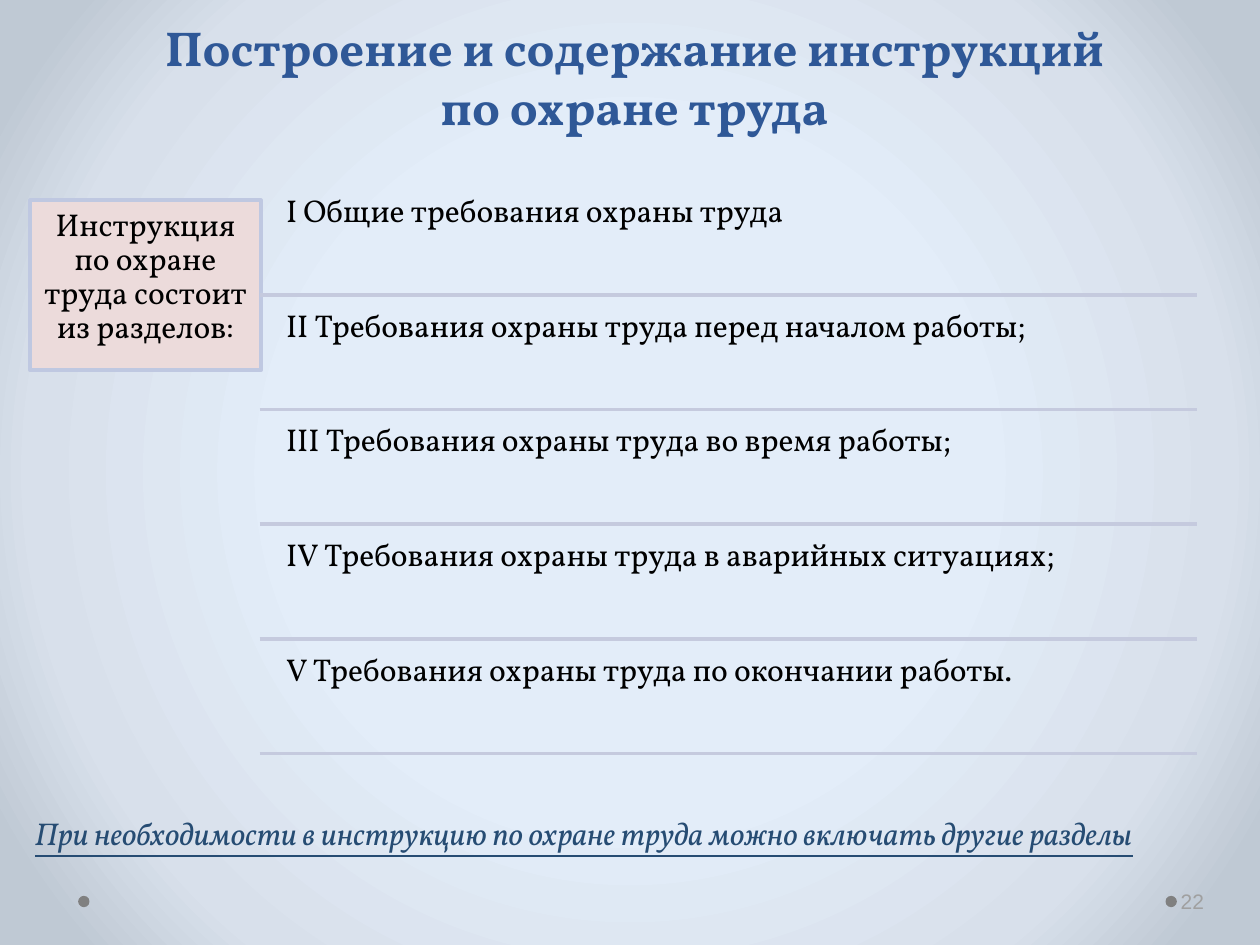
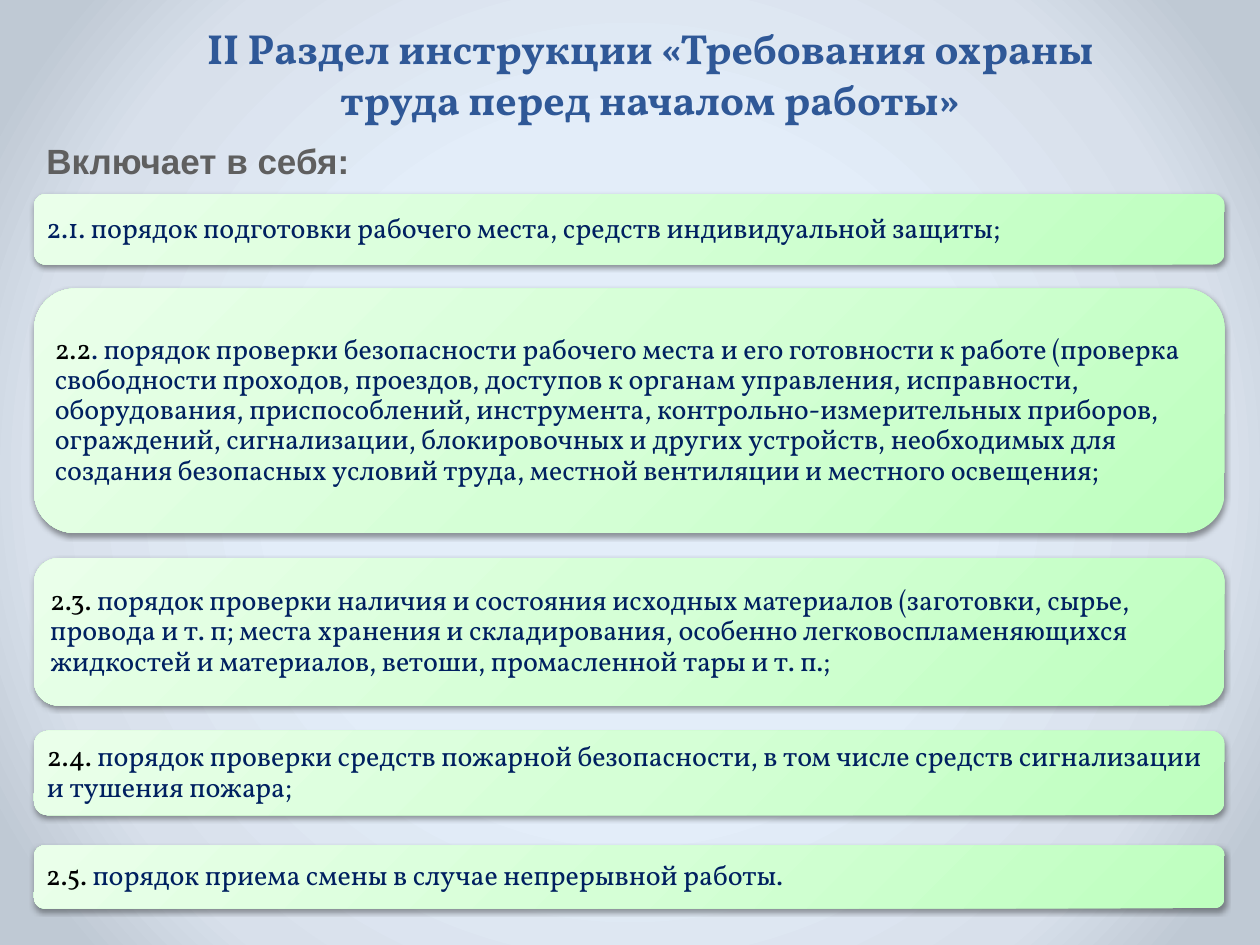
import copy

import pptx
import pptx.dml.color
import pptx.enum.shapes
import pptx.enum.text
import pptx.oxml
import pptx.oxml.ns
import pptx.util
from lxml import etree

RGBColor = pptx.dml.color.RGBColor
MSO_SHAPE = pptx.enum.shapes.MSO_SHAPE
ALIGN = pptx.enum.text.PP_ALIGN
ANCHOR = pptx.enum.text.MSO_ANCHOR
qn = pptx.oxml.ns.qn

TITLE_BLUE = RGBColor(0x2F, 0x58, 0x97)
NOTE_BLUE = RGBColor(0x26, 0x4C, 0x73)
NAVY = RGBColor(0x00, 0x20, 0x60)
BLACK = RGBColor(0x00, 0x00, 0x00)
DOT_GREY = RGBColor(0x80, 0x80, 0x80)
NUMBER_GREY = RGBColor(0xA0, 0xA0, 0xA0)
LEAD_GREY = RGBColor(0x5F, 0x5F, 0x5F)
PINK = RGBColor(0xEC, 0xDB, 0xDB)
BOX_EDGE = RGBColor(0xBF, 0xC8, 0xE1)
RULE_BLUE = RGBColor(0xC5, 0xCA, 0xDE)
SKY = [(43, RGBColor(0xE3, 0xED, 0xF9)), (76, RGBColor(0xD8, 0xE0, 0xEB)), (92, RGBColor(0xBF, 0xC9, 0xD4))]
GREEN = [(0, RGBColor(0xBE, 0xFF, 0xBF)), (50, RGBColor(0xD5, 0xFF, 0xD6)), (100, RGBColor(0xEA, 0xFF, 0xEA))]

DRAWING = 'xmlns:a="http://schemas.openxmlformats.org/drawingml/2006/main"'
RADIAL = '<a:path path="circle"><a:fillToRect l="50000" t="50000" r="50000" b="50000"/></a:path>'
DIAGONAL = '<a:lin ang="13500000" scaled="0"/>'
SHADOW = (
    f'<a:outerShdw {DRAWING} blurRad="39370" dist="20320" dir="5400000" rotWithShape="0">'
    '<a:srgbClr val="000000"><a:alpha val="38000"/></a:srgbClr></a:outerShdw>'
)

deck = pptx.Presentation()
deck.slide_width = pptx.util.Inches(10)
deck.slide_height = pptx.util.Inches(7.5)
COLUMN = deck.slide_width / 10
ROW = deck.slide_height / 7.5


def place(left, top, width, height):
    return [round(left * COLUMN), round(top * ROW), round(width * COLUMN), round(height * ROW)]


def write(frame, text, size=18, color=BLACK, font="Vollkorn", bold=False, italic=False, underline=False,
          align=ALIGN.LEFT, anchor=ANCHOR.TOP, margins=(0.1, 0.05, 0.1, 0.05), spacing=1.0, lead=""):
    frame.word_wrap = True
    frame.auto_size = pptx.enum.text.MSO_AUTO_SIZE.NONE
    frame.vertical_anchor = anchor
    frame.margin_left, frame.margin_top, frame.margin_right, frame.margin_bottom = map(pptx.util.Inches, margins)
    for index, line in enumerate(text.split("\n")):
        para = frame.add_paragraph() if index else frame.paragraphs[0]
        para.alignment = align
        para.line_spacing = spacing
        for words, tint in ((lead, BLACK), (line, color)):
            if words:
                span = para.add_run()
                span.text = words
                span.font.name = font
                span.font.size = pptx.util.Pt(size)
                span.font.color.rgb = tint
                span.font.bold = bold
                span.font.italic = italic
                span.font.underline = underline


gradients = []
for stops, direction in ((SKY, RADIAL), (GREEN, DIAGONAL)):
    marks = "".join(f'<a:gs pos="{share * 1000}"><a:srgbClr val="{color}"/></a:gs>' for share, color in stops)
    gradients.append(pptx.oxml.parse_xml(
        f'<a:gradFill {DRAWING} rotWithShape="1"><a:gsLst>{marks}</a:gsLst>{direction}</a:gradFill>'))
sky_gradient, card_gradient = gradients

master = deck.slide_master
master.background.fill.gradient()
plain_gradient = master._element.find(".//" + qn("a:gradFill"))
plain_gradient.getparent().replace(plain_gradient, sky_gradient)

pages = []
for title, size, area in (
    ("Построение и содержание инструкций\nпо охране труда", 28, (0.35, 0.09, 9.37, 1.04)),
    ("II Раздел инструкции «Требования охраны труда перед началом работы»", 24, (1.22, 0.13, 7.88, 0.91)),
):
    page = deck.slides.add_slide(deck.slide_layouts[5])
    heading = page.shapes.title
    heading.left, heading.top, heading.width, heading.height = place(*area)
    write(heading.text_frame, title, size=size, color=TITLE_BLUE, bold=True, align=ALIGN.CENTER)
    pages.append(page)
sections_page, preparation_page = pages

TIGHT = (0.07, 0.07, 0.07, 0.07)

for left in (0.62, 9.25):
    dot = sections_page.shapes.add_shape(MSO_SHAPE.OVAL, *place(left, 7.11, 0.09, 0.09))
    dot.shadow.inherit = False
    dot.fill.solid()
    dot.fill.fore_color.rgb = DOT_GREY
    dot.line.fill.background()

number_box = sections_page.shapes.add_textbox(*place(9.34, 6.95, 0.61, 0.4))
write(number_box.text_frame, "22", size=12, color=NUMBER_GREY, font="Arial",
      anchor=ANCHOR.MIDDLE, margins=(0.03, 0.05, 0.05, 0.05))

intro_box = sections_page.shapes.add_shape(MSO_SHAPE.RECTANGLE, *place(0.24, 1.59, 1.83, 1.35))
intro_box.shadow.inherit = False
intro_box.fill.solid()
intro_box.fill.fore_color.rgb = PINK
intro_box.line.color.rgb = BOX_EDGE
intro_box.line.width = pptx.util.Pt(2.25)
write(intro_box.text_frame, "Инструкция по охране труда состоит из разделов:",
      align=ALIGN.CENTER, margins=TIGHT, spacing=0.9)

SECTION_TOP, SECTION_STEP, RULE_DROP = 1.48, 0.91, 0.86
for index, section in enumerate((
    "I Общие требования охраны труда",
    "II Требования охраны труда перед началом работы;",
    "III Требования охраны труда во время работы;",
    "IV Требования охраны труда в аварийных ситуациях;",
    "V Требования охраны труда по окончании работы.",
)):
    top = SECTION_TOP + index * SECTION_STEP
    section_box = sections_page.shapes.add_textbox(*place(2.2, top, 7.29, 0.87))
    write(section_box.text_frame, section, margins=TIGHT, spacing=0.9)
    rule = sections_page.shapes.add_connector(
        pptx.enum.shapes.MSO_CONNECTOR.STRAIGHT, *place(2.06, top + RULE_DROP, 9.5, top + RULE_DROP))
    rule.line.color.rgb = RULE_BLUE
    rule.line.width = pptx.util.Pt(2.25)
    etree.SubElement(rule._element.spPr, qn("a:effectLst"))

note_box = sections_page.shapes.add_textbox(*place(0.18, 6.41, 9.71, 0.4))
write(note_box.text_frame, "При необходимости в инструкцию по охране труда можно включать другие разделы",
      color=NOTE_BLUE, italic=True, underline=True)

for top, height, lead, text in (
    (1.54, 0.56, "", "2.1. порядок подготовки рабочего места, средств индивидуальной защиты;"),
    (2.29, 1.94, "2.2",
     ". порядок проверки безопасности рабочего места и его готовности к работе (проверка свободности "
     "проходов, проездов, доступов к органам управления, исправности, оборудования, приспособлений, "
     "инструмента, контрольно-измерительных приборов, ограждений, сигнализации, блокировочных и других "
     "устройств, необходимых для создания безопасных условий труда, местной вентиляции и местного освещения;"),
    (4.43, 1.17, "2.3. ",
     "порядок проверки наличия и состояния исходных материалов (заготовки, сырье, провода и т. п; места "
     "хранения и складирования, особенно легковоспламеняющихся жидкостей и материалов, ветоши, "
     "промасленной тары и т. п.;"),
    (5.8, 0.67, "2.4. ",
     "порядок проверки средств пожарной безопасности, в том числе средств сигнализации и тушения пожара;"),
    (6.71, 0.5, "2.5. ", "порядок приема смены в случае непрерывной работы."),
):
    card = preparation_page.shapes.add_shape(MSO_SHAPE.ROUNDED_RECTANGLE, *place(0.27, top, 9.45, height))
    card.fill.gradient()
    card.line.fill.background()
    card.shadow.inherit = False
    outline = card._element.spPr
    outline.replace(outline.find(qn("a:gradFill")), copy.deepcopy(card_gradient))
    outline.find(qn("a:effectLst")).append(pptx.oxml.parse_xml(SHADOW))
    write(card.text_frame, text, lead=lead, size=16, color=NAVY, anchor=ANCHOR.MIDDLE, margins=TIGHT, spacing=0.9)

includes_box = preparation_page.shapes.add_textbox(*place(0.27, 1.06, 5.59, 0.44))
write(includes_box.text_frame, "Включает в себя:", size=20, color=LEAD_GREY, font="Arial", bold=True)

deck.save("out.pptx")
